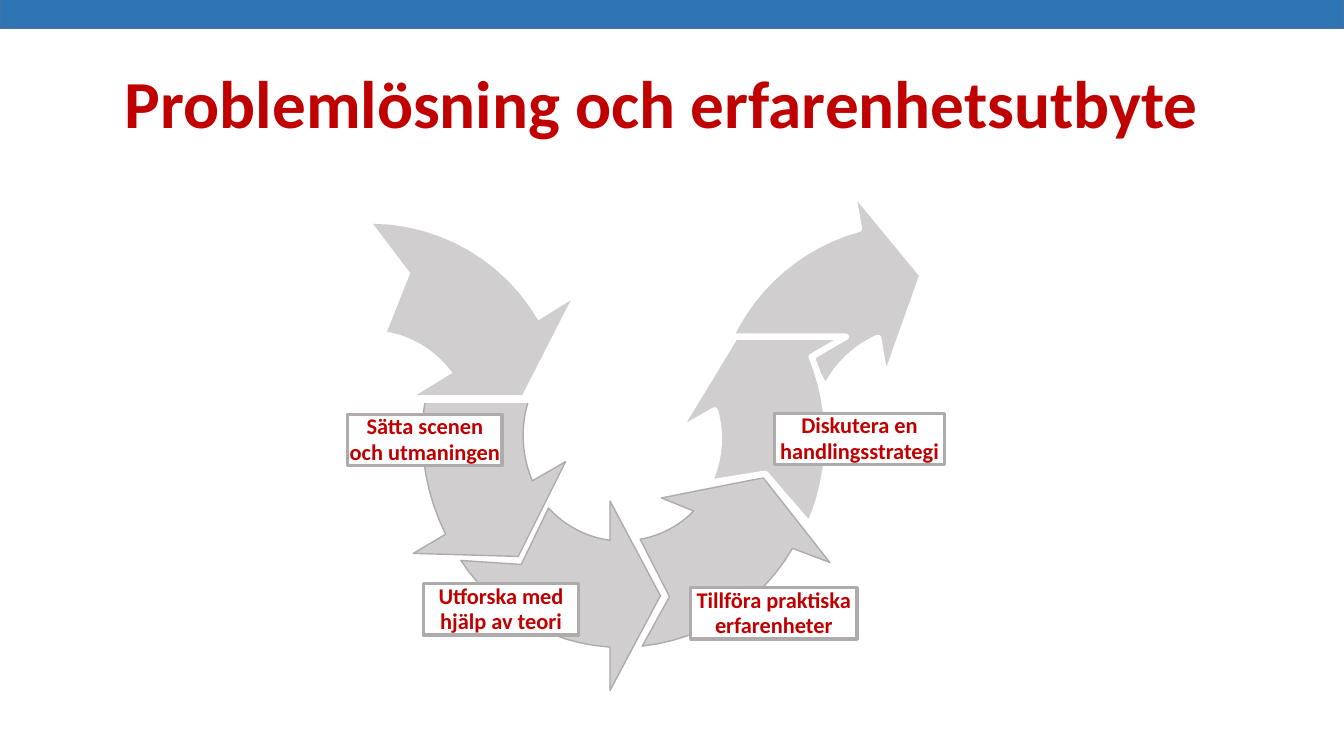
import math
from pptx import Presentation, util as u
from pptx.dml.color import RGBColor
from pptx.enum import shapes, text

hue = RGBColor.from_string


def paint(shape, fill, line=None, width=1):
    shape.shadow.inherit = False
    shape.fill.solid()
    shape.fill.fore_color.rgb = hue(fill)
    if line:
        shape.line.color.rgb = hue(line)
        shape.line.width = u.Pt(width)
    else:
        shape.line.fill.background()


def write(shape, words, size, align, gap, inset=None):
    frame = shape.text_frame
    frame.word_wrap = True
    frame.vertical_anchor = text.MSO_ANCHOR.MIDDLE
    if inset is not None:
        frame.margin_left = frame.margin_right = u.Inches(inset)
        frame.margin_top = frame.margin_bottom = u.Inches(inset)
    para = frame.paragraphs[0]
    para.alignment = align
    para.line_spacing = gap
    run = para.add_run()
    run.text = words
    run.font.name = "Calibri"
    run.font.size = u.Pt(size)
    run.font.bold = True
    run.font.color.rgb = hue("C00000")


deck = Presentation()
deck.slide_width = u.Inches(13.33)
deck.slide_height = u.Inches(7.5)
slide = deck.slides.add_slide(deck.slide_layouts[6])
draw = slide.shapes
RECT = shapes.MSO_SHAPE.RECTANGLE

title = draw.add_textbox(u.Inches(1.14), u.Inches(0.33), u.Inches(11.5), u.Inches(1.45))
write(title, "Problemlösning och erfarenhetsutbyte", 48, text.PP_ALIGN.LEFT, 0.9)

# A list holds the start, middle and end of an arc; a tuple is a corner.
arrows = [
    ("AFABAB", 1, [
        (5.14, 5.52), (4.1, 5.49), [(4.42, 5.3), (4.19, 4.39), (4.36, 3.47)],
        (4.64, 3.99), [(5.24, 3.98), (5.19, 4.38), (5.28, 4.77)], (5.61, 4.58)]),
    ("AFABAB", 1, [
        (6.55, 5.91), (6.05, 6.85), [(6.05, 6.42), (5.17, 6.14), (4.57, 5.56)],
        (5.17, 5.6), [(5.44, 5.04), (5.71, 5.25), (6.05, 5.36)], (6.05, 4.97)]),
    ("AFABAB", 1, [
        (7.57, 4.74), (8.23, 5.58), [(7.86, 5.44), (7.28, 6.07), (6.37, 6.41)],
        (6.64, 5.92), [(6.35, 5.35), (6.64, 5.25), (6.88, 5.07)], (6.56, 4.94)]),
    ("FFFFFF", 4.5, [
        (9.15, 2.73), (8.45, 1.88), [(8.52, 2.27), (7.76, 2.67), (7.24, 3.35)],
        (7.91, 3.36), [(8.19, 3.85), (8.41, 3.55), (8.71, 3.35)], (8.78, 3.77)]),
    (None, 0, [
        (4.13, 3.92), (5.18, 3.92), (5.66, 2.98),
        [(5.34, 3.18), (4.64, 2.48), (3.7, 2.22)],
        (4.07, 2.71), [(3.84, 3.29), (4.2, 3.43), (4.49, 3.7)]]),
    ("FFFFFF", 4.5, [
        (7.29, 3.34), (8.39, 3.34), [(8.05, 3.54), (8.21, 4.37), (8.03, 5.21)],
        (7.59, 4.7), [(7.03, 4.79), (7.13, 4.38), (7.09, 4.07)], (6.72, 4.28)]),
]
for line, width, parts in arrows:
    if line is None:
        mask = draw.add_shape(RECT, u.Inches(3.89), u.Inches(3.4), u.Inches(1.36), u.Inches(0.59))
        paint(mask, "FFFFFF", "FFFFFF")
    dots = []
    for part in parts:
        if isinstance(part, tuple):
            dots.append(part)
            continue
        (ax, ay), (bx, by), (cx, cy) = part
        px, py, qx, qy = bx - ax, by - ay, cx - ax, cy - ay
        area = 2 * (px * qy - py * qx)
        p, q = px * px + py * py, qx * qx + qy * qy
        dx, dy = (qy * p - py * q) / area, (px * q - qx * p) / area
        mx, my, rad = ax + dx, ay + dy, math.hypot(dx, dy)
        start = math.atan2(ay - my, ax - mx)
        sweep = math.remainder(math.atan2(cy - my, cx - mx) - start, math.tau)
        for step in range(13):
            turn = start + sweep * step / 12
            dots.append((mx + rad * math.cos(turn), my + rad * math.sin(turn)))
    dots = [(u.Inches(x), u.Inches(y)) for x, y in dots]
    path = draw.build_freeform(*dots[0])
    path.add_line_segments(dots[1:], close=True)
    paint(path.convert_to_shape(), "D0CECE", line, width)

labels = [
    ("Sätta scenen och utmaningen", 3.45, 4.11, 1.53),
    ("Utforska med hjälp av teori", 4.2, 5.79, 1.54),
    ("Tillföra praktiska erfarenheter", 6.85, 5.83, 1.65),
    ("Diskutera en handlingsstrategi", 7.68, 4.1, 1.69),
]
for words, left, top, wide in labels:
    box = draw.add_shape(RECT, u.Inches(left), u.Inches(top), u.Inches(wide), u.Inches(0.51))
    paint(box, "FFFFFF", "AFABAB", 2.25)
    write(box, words, 16, text.PP_ALIGN.CENTER, 0.95, inset=0)

band = draw.add_shape(RECT, 0, u.Inches(-0.1), u.Inches(13.33), u.Inches(0.38))
paint(band, "2E75B6", "43739E")

deck.save("out.pptx")
